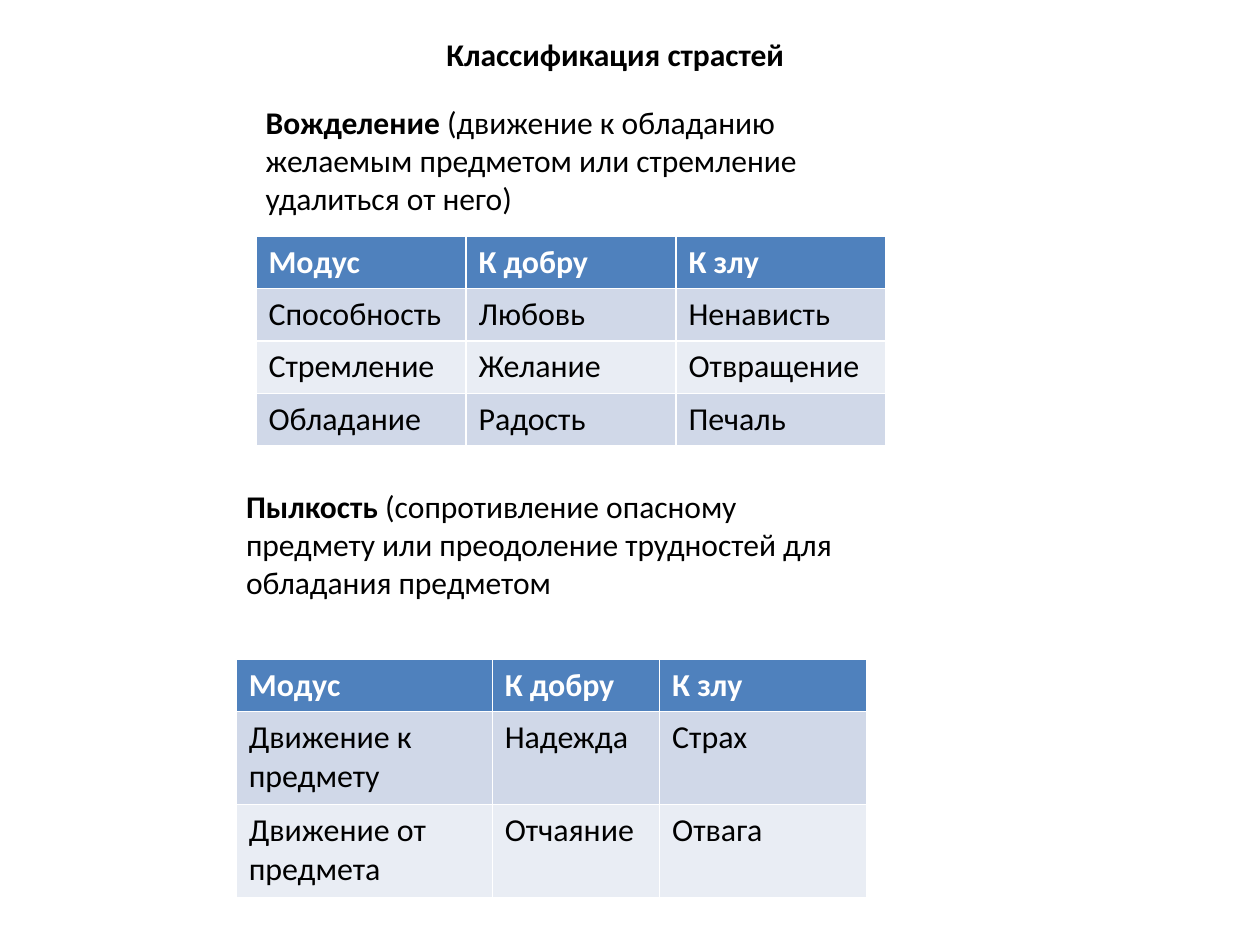
from dataclasses import dataclass

from pptx import Presentation
from pptx.dml.color import RGBColor
from pptx.enum.text import MSO_ANCHOR, MSO_AUTO_SIZE, PP_ALIGN
from pptx.util import Cm, Pt

TOP = MSO_ANCHOR.TOP
GROW = MSO_AUTO_SIZE.SHAPE_TO_FIT_TEXT
CENTER = PP_ALIGN.CENTER
TITLE_ONLY = 5


@dataclass(frozen=True)
class Theme:
    font: str = "Calibri"
    text_size: float = 22.7
    table_size: float = 23
    text: RGBColor = RGBColor(0, 0, 0)
    header_text: RGBColor = RGBColor(255, 255, 255)
    header_fill: RGBColor = RGBColor.from_string("4F81BD")
    bands: tuple = (RGBColor.from_string("D0D8E8"), RGBColor.from_string("E9EDF4"))


THEME = Theme()
FRAME_FORMAT = {"word_wrap": True, "auto_size": GROW, "vertical_anchor": TOP}
CELL_FORMAT = {
    "margin_left": Cm(0.32), "margin_right": Cm(0.32),
    "margin_top": Cm(0.16), "margin_bottom": Cm(0.16),
    "vertical_anchor": TOP,
}

HEADER = ("Модус", "К добру", "К злу")
DESIRE_ROWS = (
    HEADER,
    ("Способность", "Любовь", "Ненависть"),
    ("Стремление", "Желание", "Отвращение"),
    ("Обладание", "Радость", "Печаль"),
)
ARDOUR_ROWS = (
    HEADER,
    ("Движение к предмету", "Надежда", "Страх"),
    ("Движение от предмета", "Отчаяние", "Отвага"),
)


def apply_format(target, values):
    for name, value in values.items():
        setattr(target, name, value)


def add_run(paragraph, text, size, color, bold=False):
    run = paragraph.add_run()
    run.text = text
    apply_format(run.font, {"name": THEME.font, "size": Pt(size), "bold": bold})
    run.font.color.rgb = color


def set_title(slide, text, left, top, width, height):
    title = slide.shapes.title
    apply_format(title, {"left": Cm(left), "top": Cm(top),
                         "width": Cm(width), "height": Cm(height)})
    apply_format(title.text_frame, FRAME_FORMAT)
    paragraph = title.text_frame.paragraphs[0]
    paragraph.alignment = CENTER
    add_run(paragraph, text, THEME.text_size, THEME.text, bold=True)


def add_definition(slide, term, meaning, left, top, width, height):
    """Add a text box with a bold term followed by its meaning."""
    box = slide.shapes.add_textbox(Cm(left), Cm(top), Cm(width), Cm(height))
    apply_format(box.text_frame, FRAME_FORMAT)
    paragraph = box.text_frame.paragraphs[0]
    add_run(paragraph, term, THEME.text_size, THEME.text, bold=True)
    add_run(paragraph, meaning, THEME.text_size, THEME.text)


def fill_cell(cell, text, row_index):
    is_header = row_index == 0
    apply_format(cell, CELL_FORMAT)
    cell.fill.solid()
    cell.fill.fore_color.rgb = (
        THEME.header_fill if is_header else THEME.bands[(row_index - 1) % 2])
    color = THEME.header_text if is_header else THEME.text
    add_run(cell.text_frame.paragraphs[0], text, THEME.table_size, color, is_header)


def add_passion_table(slide, rows, left, top, column_widths, row_heights):
    table = slide.shapes.add_table(
        len(rows), len(column_widths), Cm(left), Cm(top),
        Cm(sum(column_widths)), Cm(sum(row_heights))).table
    for column, width in zip(table.columns, column_widths):
        column.width = Cm(width)
    for row_index, (row, height) in enumerate(zip(table.rows, row_heights)):
        row.height = Cm(height)
        for cell, text in zip(row.cells, rows[row_index]):
            fill_cell(cell, text, row_index)


def main():
    presentation = Presentation()
    apply_format(presentation, {"slide_width": Cm(32), "slide_height": Cm(24)})
    slide = presentation.slides.add_slide(presentation.slide_layouts[TITLE_ONLY])

    set_title(slide, "Классификация страстей", 6.25, 0.75, 18.75, 1.22)
    add_definition(
        slide, "Вожделение",
        " (движение к обладанию желаемым предметом или стремление удалиться от него)",
        6.5, 2.5, 16, 3.17)
    add_passion_table(slide, DESIRE_ROWS, 6.5, 6, [16 / 3] * 3, [1.33] * 4)
    add_definition(
        slide, "Пылкость",
        " (сопротивление опасному предмету или преодоление трудностей"
        " для обладания предметом",
        6, 12.25, 15.75, 3.17)
    add_passion_table(slide, ARDOUR_ROWS, 6, 16.75, [6.5, 4.25, 5.25], [1.33, 2.36, 2.36])

    presentation.save("out.pptx")


if __name__ == "__main__":
    main()
